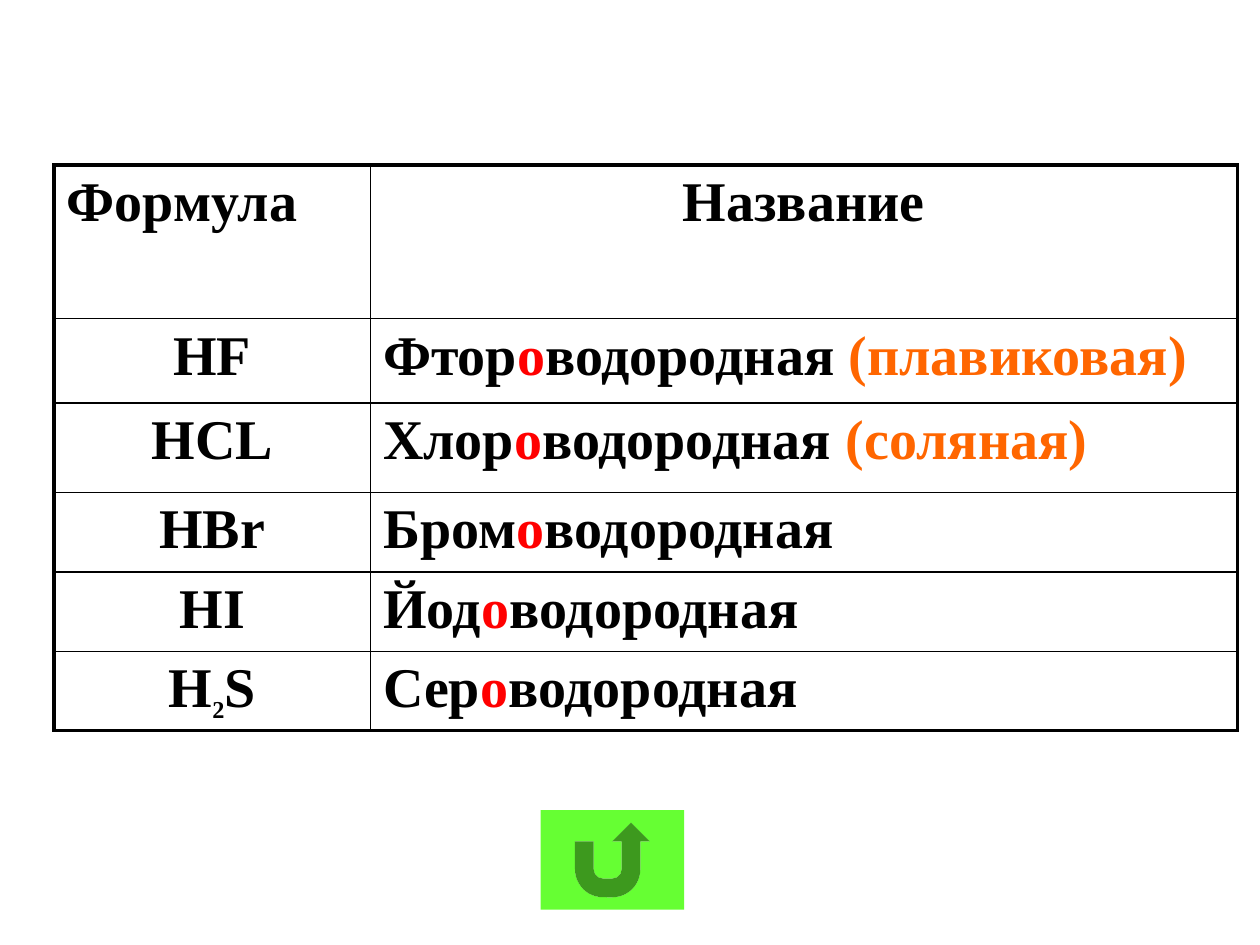
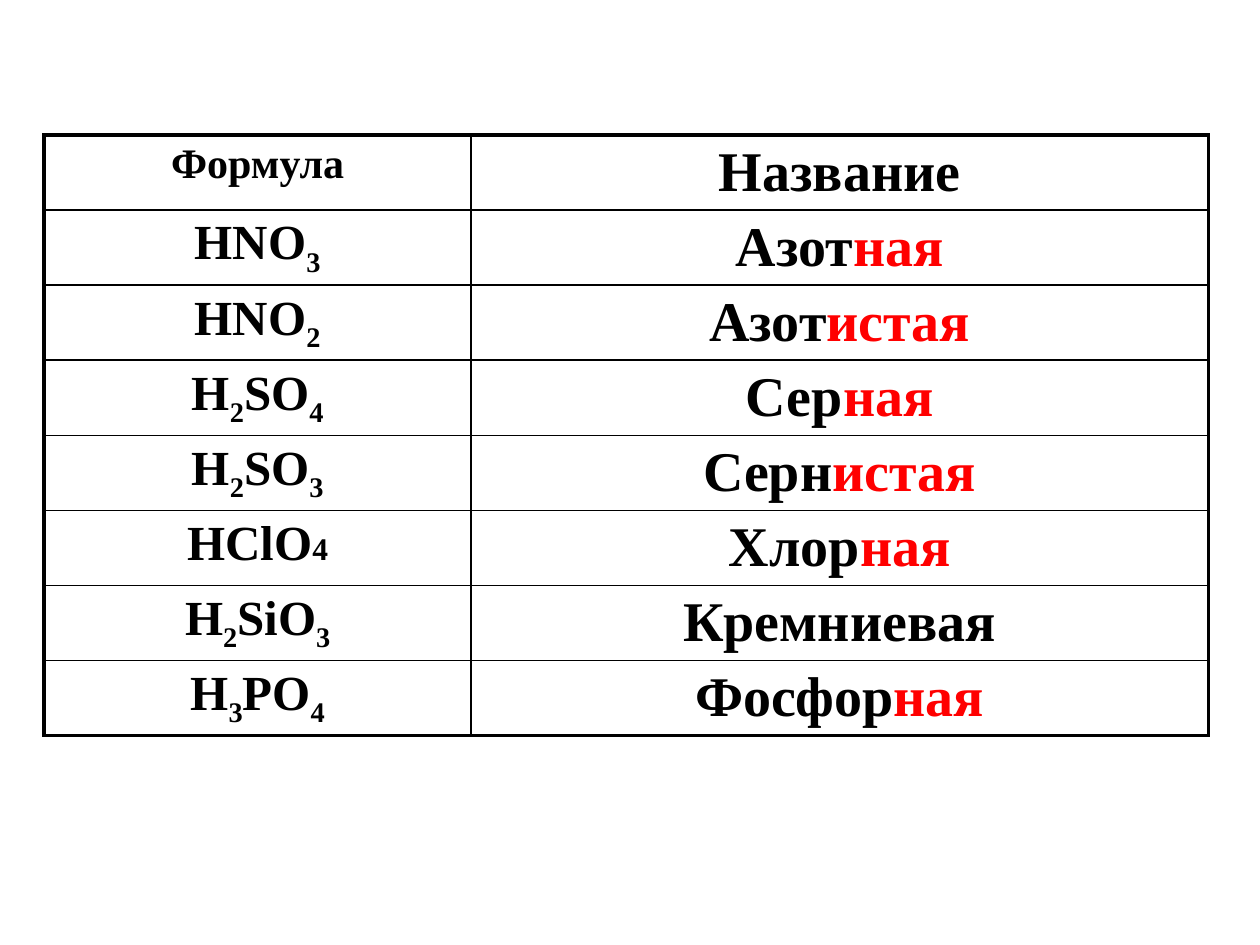
import pptx
import pptx.util
import pptx.dml.color
import pptx.enum.shapes
import pptx.enum.text
import pptx.oxml.ns
import lxml.etree

BLACK = pptx.dml.color.RGBColor(0x00, 0x00, 0x00)
RED = pptx.dml.color.RGBColor(0xFF, 0x00, 0x00)
ORANGE = pptx.dml.color.RGBColor(0xFF, 0x66, 0x00)
GREEN = pptx.dml.color.RGBColor(0x66, 0xFF, 0x33)
LEFT = pptx.enum.text.PP_ALIGN.LEFT
CENTER = pptx.enum.text.PP_ALIGN.CENTER
FONT = "Times New Roman"
OUTER, INNER = 2.25, 1

SUB = {"sub": True}
SMALL_SUB = {"sub": True, "size": 24}
SMALL = {"size": 18}
ACCENT = {"color": RED}
TRIVIAL = {"color": ORANGE}

FORMULA, NAME = ["Формула"], ["Название"]

ANOXIC_ACIDS = {
    "origin": (0.43, 1.31),
    "columns": (2.51, 6.88),
    "rows": (1.22, 0.67, 0.71, 0.63, 0.63, 0.63),
    "header_sizes": (32, 32),
    "body_sizes": (32, 32),
    "header_align": (LEFT, CENTER),
    "body_align": (CENTER, LEFT),
    "cells": [
        (FORMULA, NAME),
        (["HF"], ["Фтор", ("о", ACCENT), "водородная ", ("(плавиковая)", TRIVIAL)]),
        (["HCL"], ["Хлор", ("о", ACCENT), "водородная ", ("(соляная)", TRIVIAL)]),
        (["HBr"], ["Бром", ("о", ACCENT), "водородная"]),
        (["HI"], ["Йод", ("о", ACCENT), "водородная"]),
        (["H", ("2", SMALL_SUB), "S"], ["Сер", ("о", ACCENT), "водородная"]),
    ],
}

OXYGEN_ACIDS = {
    "origin": (0.35, 1.07),
    "columns": (3.39, 5.85),
    "rows": (4.77 / 8,) * 8,
    "header_sizes": (24, 32),
    "body_sizes": (28, 32),
    "header_align": (CENTER, CENTER),
    "body_align": (CENTER, CENTER),
    "cells": [
        (FORMULA, NAME),
        (["HNO", ("3", SUB)], ["Азот", ("ная", ACCENT)]),
        (["HNO", ("2", SUB)], ["Азот", ("истая", ACCENT)]),
        (["H", ("2", SUB), "SO", ("4", SUB)], ["Сер", ("ная", ACCENT)]),
        (["H", ("2", SUB), "SO", ("3", SUB)], ["Серн", ("истая", ACCENT)]),
        (["HClO", ("4", SMALL)], ["Хлор", ("ная", ACCENT)]),
        (["H", ("2", SUB), "SiO", ("3", SUB)], ["Кремниевая"]),
        (["H", ("3", SUB), "PO", ("4", SUB)], ["Фосфор", ("ная", ACCENT)]),
    ],
}

RETURN_BUTTON = (4.29, 6.43, 1.14, 0.79)


def inches(*lengths):
    return [pptx.util.Inches(length) for length in lengths]


def write_runs(paragraph, runs, size, align):
    paragraph.alignment = align
    paragraph.font.name = FONT
    paragraph.font.size = pptx.util.Pt(size)
    paragraph.font.bold = True
    paragraph.font.color.rgb = BLACK
    for part in runs:
        text, style = (part, {}) if isinstance(part, str) else part
        run = paragraph.add_run()
        run.text = text
        if "color" in style:
            run.font.color.rgb = style["color"]
        if "size" in style:
            run.font.size = pptx.util.Pt(style["size"])
        if "sub" in style:
            run.font._element.set("baseline", "-25000")


def draw_borders(cell, widths):
    qn = pptx.oxml.ns.qn
    properties = cell._tc.get_or_add_tcPr()
    for side, width in widths.items():
        border = lxml.etree.SubElement(
            properties, qn(f"a:ln{side}"), w=str(pptx.util.Pt(width)))
        fill = lxml.etree.SubElement(border, qn("a:solidFill"))
        lxml.etree.SubElement(fill, qn("a:srgbClr"), val=str(BLACK))


def add_acid_table(slide, acids):
    columns, rows = acids["columns"], acids["rows"]
    frame = slide.shapes.add_table(
        len(rows), len(columns),
        *inches(*acids["origin"], sum(columns), sum(rows)))
    table = frame.table
    table.first_row = table.horz_banding = False
    for column, width in zip(table.columns, columns):
        column.width = pptx.util.Inches(width)
    for row, height in zip(table.rows, rows):
        row.height = pptx.util.Inches(height)
    last_row, last_column = len(rows) - 1, len(columns) - 1
    for r, acid in enumerate(acids["cells"]):
        part = "body" if r else "header"
        for c, runs in enumerate(acid):
            cell = table.cell(r, c)
            write_runs(cell.text_frame.paragraphs[0], runs,
                       acids[f"{part}_sizes"][c], acids[f"{part}_align"][c])
            draw_borders(cell, {
                "L": OUTER if c == 0 else INNER,
                "R": OUTER if c == last_column else INNER,
                "T": OUTER if r == 0 else INNER,
                "B": OUTER if r == last_row else INNER,
            })
            cell.fill.background()


def add_return_button(slide):
    button = slide.shapes.add_shape(
        pptx.enum.shapes.MSO_SHAPE.ACTION_BUTTON_RETURN, *inches(*RETURN_BUTTON))
    button.shadow.inherit = False
    button.fill.solid()
    button.fill.fore_color.rgb = GREEN
    button.line.fill.background()


def main():
    deck = pptx.Presentation()
    deck.slide_width, deck.slide_height = inches(10, 7.5)
    blank = deck.slide_layouts[6]
    anoxic, oxygen = [deck.slides.add_slide(blank) for _ in range(2)]
    add_acid_table(anoxic, ANOXIC_ACIDS)
    add_return_button(anoxic)
    add_acid_table(oxygen, OXYGEN_ACIDS)
    deck.save("out.pptx")


if __name__ == "__main__":
    main()
